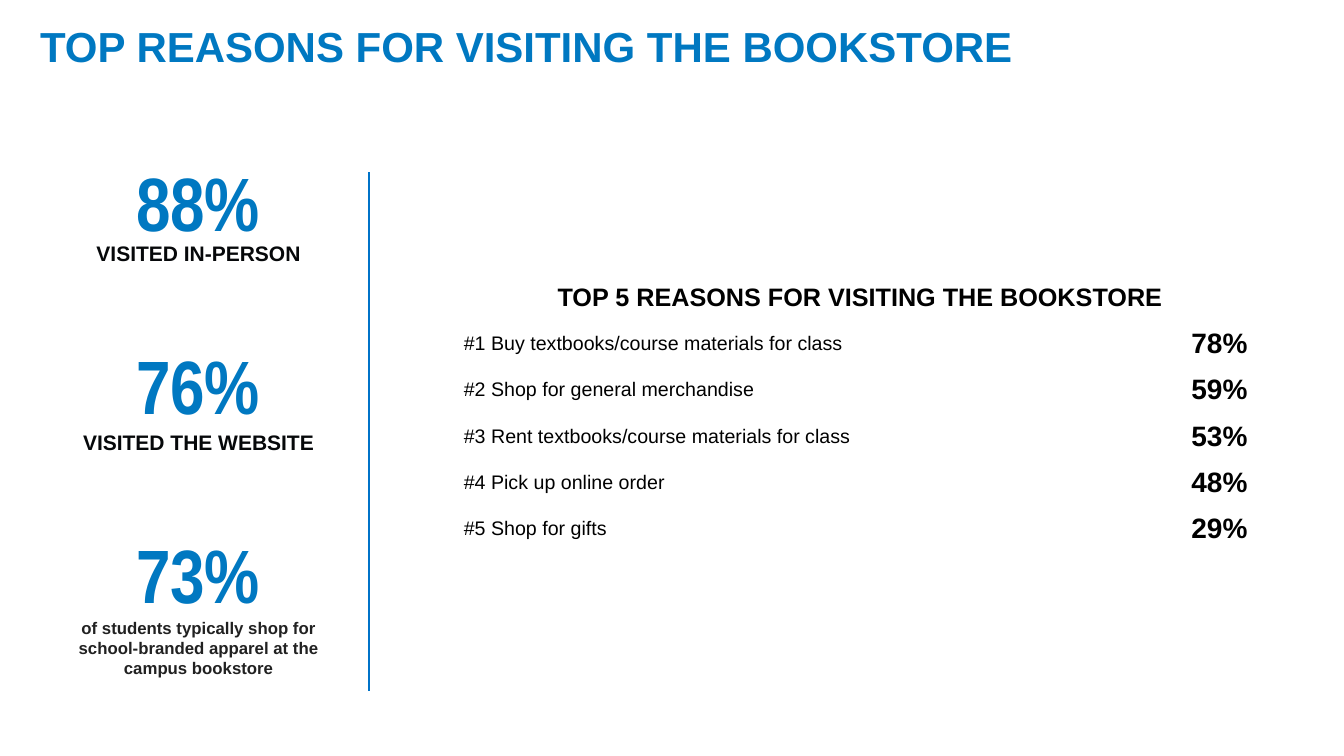
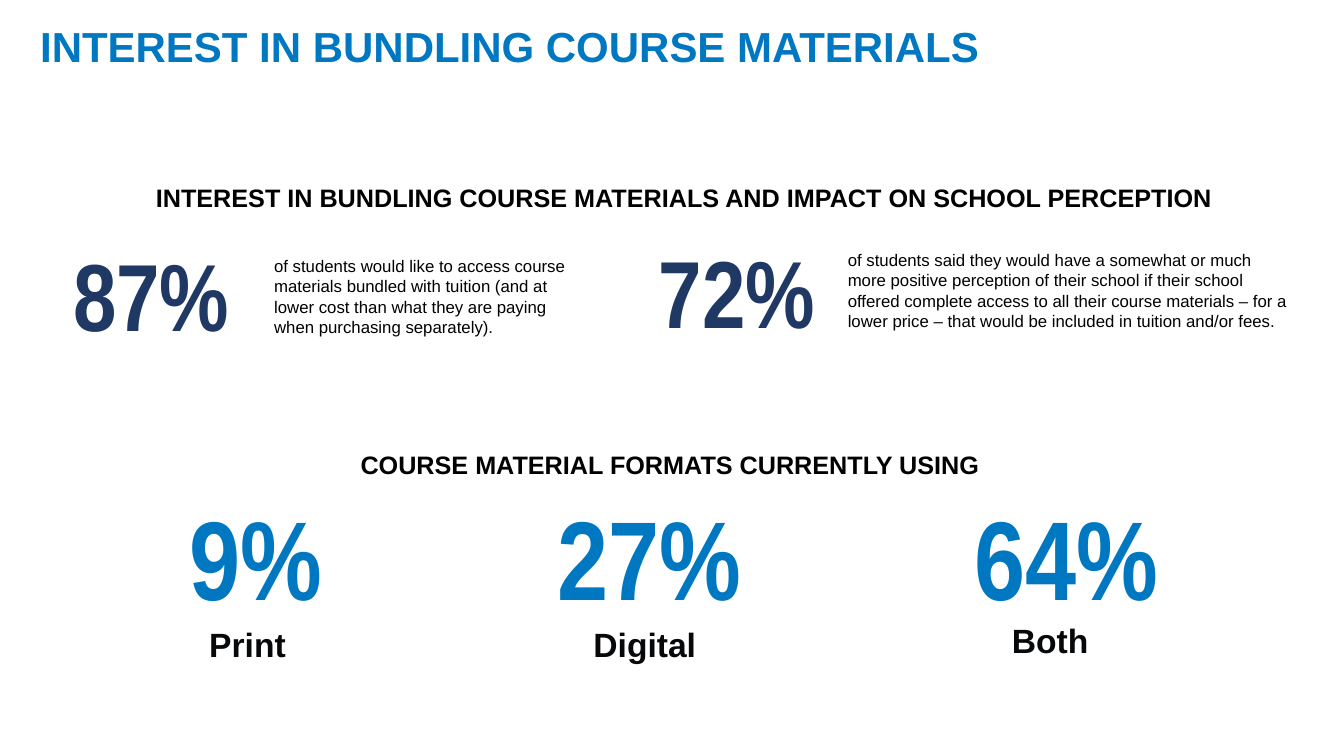
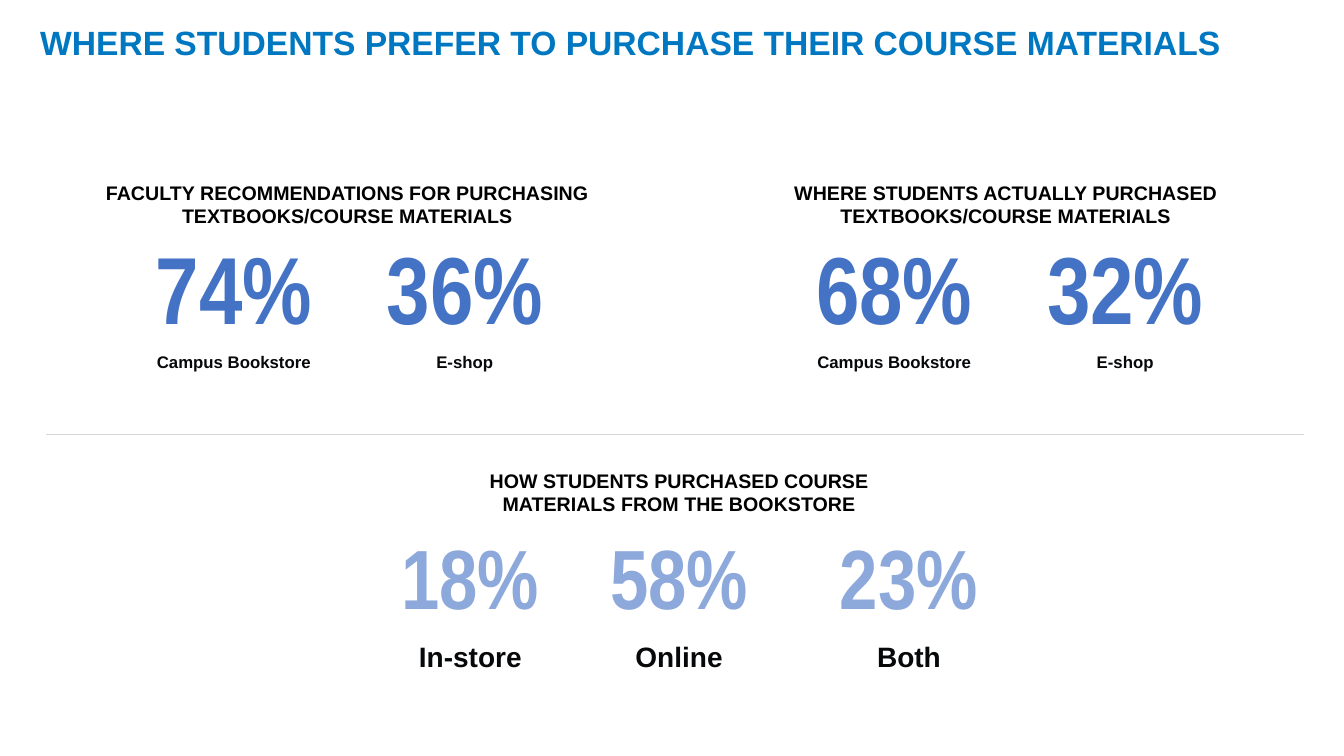
from dataclasses import dataclass

from lxml.etree import SubElement
from pptx import Presentation
from pptx.dml.color import RGBColor as Color
from pptx.enum.shapes import MSO_CONNECTOR as Connector, MSO_SHAPE as Preset
from pptx.enum.text import MSO_ANCHOR as Anchor, PP_ALIGN as Align
from pptx.oxml.ns import qn
from pptx.util import Inches, Pt


@dataclass(frozen=True)
class Theme:
    sans: str = "Arial"
    narrow: str = "Arial Narrow"
    blue: Color = Color(0x00, 0x78, 0xC1)
    rule_blue: Color = Color(0x00, 0x73, 0xC8)
    navy: Color = Color(0x1F, 0x38, 0x64)
    mid_blue: Color = Color(0x44, 0x72, 0xC4)
    pale_blue: Color = Color(0x8D, 0xA9, 0xDB)
    black: Color = Color(0x00, 0x00, 0x00)
    ink: Color = Color(0x06, 0x08, 0x0A)
    charcoal: Color = Color(0x21, 0x21, 0x21)
    gray: Color = Color(0xD8, 0xD8, 0xD8)
    title: int = 30
    long_title: int = 24
    heading: int = 18
    subheading: int = 14
    body: int = 12
    visit_label: int = 15
    format_label: int = 24
    channel_label: int = 20
    visit_figure: int = 54
    channel_figure: int = 60
    share_figure: int = 68
    format_figure: int = 80
    row_text: int = 14
    row_figure: int = 20


theme = Theme()


def add_text(page, text, place, size, color, font=theme.sans, bold=True, align=Align.CENTER,
             anchor=Anchor.TOP, padded=True, spacing=None, preset=None):
    place = [Inches(length) for length in place]
    if preset is None:
        box = page.shapes.add_textbox(*place)
    else:
        box = page.shapes.add_shape(preset, *place)
        box.shadow.inherit = False
        box.fill.background()
        box.line.fill.background()
    frame = box.text_frame
    frame.word_wrap = True
    frame.vertical_anchor = anchor
    frame.margin_left = frame.margin_right = Inches(0.1 if padded else 0)
    frame.margin_top = frame.margin_bottom = Inches(0.05 if padded else 0)
    para = frame.paragraphs[0]
    para.text = text
    para.alignment = align
    para.line_spacing = spacing
    para.font.name = font
    para.font.size = Pt(size)
    para.font.bold = bold
    para.font.color.rgb = color


def add_rule(page, start, end, color):
    rule = page.shapes.add_connector(
        Connector.STRAIGHT, *[Inches(length) for length in (*start, *end)])
    rule.line.color.rgb = color
    rule.line.width = Pt(0.75)
    SubElement(rule._element.spPr, qn("a:effectLst"))


deck = Presentation()
deck.slide_width = Inches(13.33)
deck.slide_height = Inches(7.5)

pages = []
for title, size in [
    ("TOP REASONS FOR VISITING THE BOOKSTORE", theme.title),
    ("INTEREST IN BUNDLING COURSE MATERIALS", theme.title),
    ("WHERE STUDENTS PREFER TO PURCHASE THEIR COURSE MATERIALS", theme.long_title),
]:
    page = deck.slides.add_slide(deck.slide_layouts[6])
    add_text(page, title, (0.3, 0.21, 12.73, 0.66), size, theme.blue,
             align=Align.LEFT, spacing=0.9)
    pages.append(page)
reasons_page, bundling_page, purchase_page = pages

for figure, top in [("88%", 1.5), ("76%", 3.31), ("73%", 5.19)]:
    add_text(reasons_page, figure, (1.05, top, 1.83, 1.01), theme.visit_figure,
             theme.blue, theme.narrow)
for label, place in [
    ("VISITED IN-PERSON", (0.56, 2.29, 2.82, 0.44)),
    ("VISITED THE WEBSITE", (0.69, 4.16, 2.56, 0.46)),
]:
    add_text(reasons_page, label, place, theme.visit_label, theme.ink,
             anchor=Anchor.MIDDLE, padded=False)
add_text(reasons_page,
         "of students typically shop for school-branded apparel at the campus bookstore",
         (0.76, 6.13, 2.42, 0.74), theme.body, theme.charcoal, padded=False)
add_rule(reasons_page, (3.66, 1.71), (3.66, 6.86), theme.rule_blue)

reasons = [
    ("TOP 5 REASONS FOR VISITING THE BOOKSTORE", ""),
    ("#1 Buy textbooks/course materials for class", "78%"),
    ("#2 Shop for general merchandise", "59%"),
    ("#3 Rent textbooks/course materials for class", "53%"),
    ("#4 Pick up online order", "48%"),
    ("#5 Shop for gifts", "29%"),
]
table = reasons_page.shapes.add_table(
    len(reasons), 2, Inches(4.5), Inches(2.73), Inches(8.06), Inches(2.75)).table
table.first_row = table.horz_banding = False
table.columns[0].width = Inches(7.13)
table.columns[1].width = Inches(0.93)
table.cell(0, 0).merge(table.cell(0, 1))
for row, texts in enumerate(reasons):
    table.rows[row].height = Inches(0.46 if row else 0.45)
    for column, text in enumerate(texts):
        cell = table.cell(row, column)
        cell.fill.background()
        if cell.is_spanned:
            continue
        is_reason = row > 0 and column == 0
        cell.vertical_anchor = Anchor.MIDDLE
        para = cell.text_frame.paragraphs[0]
        para.text = text
        para.alignment = Align.LEFT if is_reason else Align.CENTER
        para.font.name = theme.sans
        para.font.size = Pt(theme.heading if row == 0 else
                            theme.row_text if is_reason else theme.row_figure)
        para.font.bold = not is_reason
        para.font.color.rgb = theme.black

for heading, place in [
    ("INTEREST IN BUNDLING COURSE MATERIALS AND IMPACT ON SCHOOL PERCEPTION",
     (1.2, 1.76, 11.17, 0.51)),
    ("COURSE MATERIAL FORMATS CURRENTLY USING", (3.47, 4.41, 6.35, 0.53)),
]:
    add_text(bundling_page, heading, place, theme.heading, theme.black,
             preset=Preset.FLOWCHART_PROCESS)

for figure, left, top, finding, place in [
    ("87%", 0.44, 2.29,
     "of students would like to access course materials bundled with tuition (and at lower "
     "cost than what they are paying when purchasing separately).",
     (2.62, 2.49, 3.11, 0.99)),
    ("72%", 6.25, 2.27,
     "of students said they would have a somewhat or much more positive perception of their "
     "school if their school offered complete access to all their course materials – for a "
     "lower price – that would be included in tuition and/or fees.",
     (8.31, 2.43, 4.61, 0.99)),
]:
    add_text(bundling_page, finding, place, theme.body, theme.black, bold=False,
             align=Align.LEFT, preset=Preset.FLOWCHART_PROCESS)
    add_text(bundling_page, figure, (left, top, 2.12, 1.25), theme.share_figure,
             theme.navy, theme.narrow)

for figure, left, label, label_left, spacing in [
    ("9%", 1.13, "Print", 1.86, None),
    ("27%", 5.03, "Digital", 5.8, None),
    ("64%", 9.17, "Both", 9.82, 0.9),
]:
    add_text(bundling_page, figure, (left, 4.8, 2.82, 1.45), theme.format_figure,
             theme.blue, theme.narrow)
    add_text(bundling_page, label, (label_left, 6.19, 1.19, 0.38), theme.format_label,
             theme.ink, padded=False, spacing=spacing)

for heading, place, anchor in [
    ("FACULTY RECOMMENDATIONS FOR PURCHASING TEXTBOOKS/COURSE MATERIALS",
     (0.68, 1.76, 5.53, 0.53), Anchor.MIDDLE),
    ("WHERE STUDENTS ACTUALLY PURCHASED TEXTBOOKS/COURSE MATERIALS",
     (7.5, 1.76, 4.95, 0.53), Anchor.MIDDLE),
    ("HOW STUDENTS PURCHASED COURSE MATERIALS FROM THE BOOKSTORE",
     (4.59, 4.6, 4.29, 0.53), Anchor.TOP),
]:
    add_text(purchase_page, heading, place, theme.subheading, theme.black,
             anchor=anchor, preset=Preset.FLOWCHART_PROCESS)

for group_left, figures in [(1.26, ("74%", "36%")), (7.81, ("68%", "32%"))]:
    for index, (figure, seller) in enumerate(zip(figures, ("Campus Bookstore", "E-shop"))):
        left = group_left + index * 2.29
        add_text(purchase_page, figure, (left, 2.23, 2.12, 1.25), theme.share_figure,
                 theme.mid_blue, theme.narrow)
        add_text(purchase_page, seller, (left + 0.13, 3.44, 1.86, 0.3), theme.body,
                 theme.ink, anchor=Anchor.MIDDLE, padded=False)

add_rule(purchase_page, (12.93, 4.31), (0.46, 4.31), theme.gray)

for figure, left, channel in [
    ("18%", 3.73, "In-store"),
    ("58%", 5.8, "Online"),
    ("23%", 8.08, "Both"),
]:
    add_text(purchase_page, figure, (left, 5.16, 1.87, 1.11), theme.channel_figure,
             theme.pale_blue, theme.narrow)
    add_text(purchase_page, channel, (left + 0.34, 6.34, 1.19, 0.38), theme.channel_label,
             theme.ink, padded=False)

deck.save("out.pptx")
